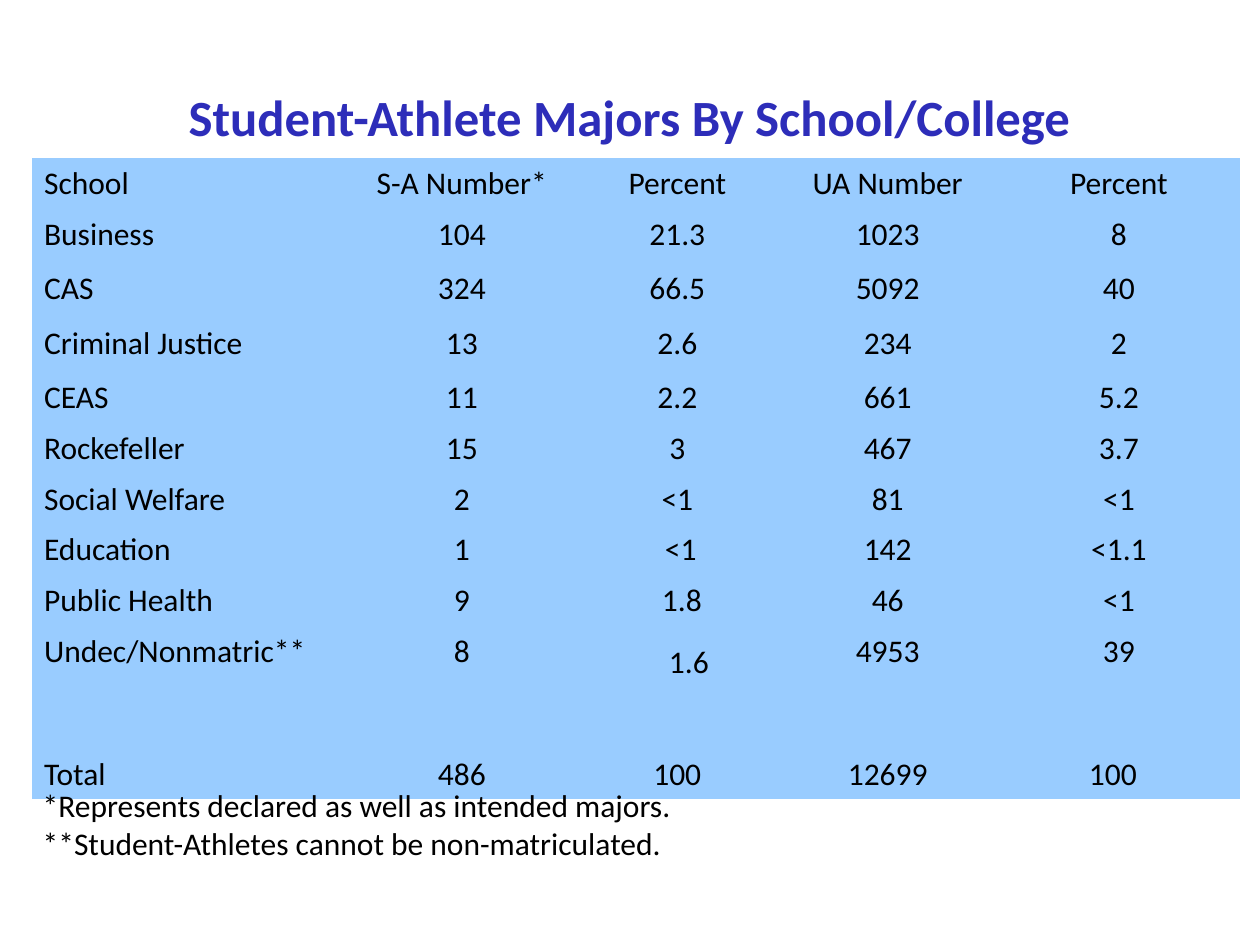
from pptx import Presentation
from pptx.dml.color import RGBColor
from pptx.enum.text import MSO_ANCHOR as Anchor, MSO_AUTO_SIZE as AutoSize, PP_ALIGN as Align
from pptx.util import Pt

FONT = "Calibri"
BLACK = "000000"
TITLE_BLUE = "2D2DB9"
TABLE_BLUE = "99CCFF"
PLAIN_STYLE = "{2D5ABB26-0587-4C30-8999-92F81FD0307C}"

COLUMN_WIDTHS = [180, 131.8, 114.5, 126, 138.2]
ROW_HEIGHTS = [28.8] + [31] * 3 + [28.8] * 5 + [36, 34, 28.8]
MAJORS = [
    ("School", "S-A Number*", "Percent", "UA Number", "Percent"),
    ("Business", "104", "21.3", "1023", "8"),
    ("CAS", "324", "66.5", "5092", "40"),
    ("Criminal Justice", "13", "2.6", "234", "2"),
    ("CEAS", "11", "2.2", "661", "5.2"),
    ("Rockefeller", "15", "3", "467", "3.7"),
    ("Social Welfare", "2", "<1", "81", "<1"),
    ("Education", "1", "<1", "142", "<1.1"),
    ("Public Health", "9", "1.8", "46", "<1"),
    ("Undec/Nonmatric**", "8", "1.6", "4953", "39"),
    ("", "", "", "", ""),
    ("Total", "486", "100", "12699", "100"),
]
LEFT_INSETS = {(8, 2): 48.5, (9, 2): 52.5, (11, 4): 52}
NOTES = [
    "*Represents declared as well as intended majors.",
    "**Student-Athletes cannot be non-matriculated.",
]


def color(hex_string):
    return RGBColor.from_string(hex_string)


def format_paragraph(paragraph, size, hex_string, bold=False, align=Align.LEFT):
    paragraph.alignment = align
    font = paragraph.font
    font.name, font.size, font.bold = FONT, Pt(size), bold
    font.color.rgb = color(hex_string)


def add_title(slide, text):
    title = slide.shapes.title
    title.left, title.top, title.width, title.height = Pt(36), Pt(21.6), Pt(648), Pt(90)
    frame = title.text_frame
    frame.text = text
    frame.auto_size = AutoSize.NONE
    frame.vertical_anchor = Anchor.MIDDLE
    frame.margin_left = frame.margin_right = frame.margin_top = frame.margin_bottom = 0
    format_paragraph(frame.paragraphs[0], 29, TITLE_BLUE, True, Align.CENTER)


def fill_cell(cell, text, align, left_inset=7.2, top_inset=5):
    cell.fill.solid()
    cell.fill.fore_color.rgb = color(TABLE_BLUE)
    cell.margin_left, cell.margin_right = Pt(left_inset), Pt(7.2)
    cell.margin_top, cell.margin_bottom = Pt(top_inset), Pt(3.6)
    cell.text = text
    paragraph = cell.text_frame.paragraphs[0]
    paragraph.line_spacing = 0.93
    format_paragraph(paragraph, 18, BLACK, align=align)


def add_majors_table(slide):
    frame = slide.shapes.add_table(
        len(MAJORS), len(COLUMN_WIDTHS), Pt(18), Pt(90),
        Pt(sum(COLUMN_WIDTHS)), Pt(sum(ROW_HEIGHTS)))
    table = frame.table
    table.first_row = table.horz_banding = False
    table._tbl.tblPr[0].text = PLAIN_STYLE
    for column, width in zip(table.columns, COLUMN_WIDTHS):
        column.width = Pt(width)
    for row, height in zip(table.rows, ROW_HEIGHTS):
        row.height = Pt(height)
    for r, values in enumerate(MAJORS):
        for c, text in enumerate(values):
            indented = (r, c) in LEFT_INSETS
            align = Align.LEFT if c == 0 or indented else Align.CENTER
            fill_cell(table.cell(r, c), text, align, LEFT_INSETS.get((r, c), 7.2))
    fill_cell(table.cell(7, 2), MAJORS[7][2], Align.CENTER, left_inset=11)
    fill_cell(table.cell(9, 2), MAJORS[9][2], Align.LEFT, LEFT_INSETS[9, 2], top_inset=11)


def add_notes(slide, lines):
    box = slide.shapes.add_textbox(Pt(17.3), Pt(445.7), Pt(666), Pt(51))
    frame = box.text_frame
    frame.word_wrap = True
    frame.auto_size = AutoSize.SHAPE_TO_FIT_TEXT
    frame.text = "\n".join(lines)
    for paragraph in frame.paragraphs:
        format_paragraph(paragraph, 18, BLACK)


def main():
    presentation = Presentation()
    presentation.slide_width, presentation.slide_height = Pt(720), Pt(540)
    slide = presentation.slides.add_slide(presentation.slide_layouts[5])
    add_title(slide, "Student-Athlete Majors By School/College")
    add_majors_table(slide)
    add_notes(slide, NOTES)
    presentation.save("out.pptx")


if __name__ == "__main__":
    main()
